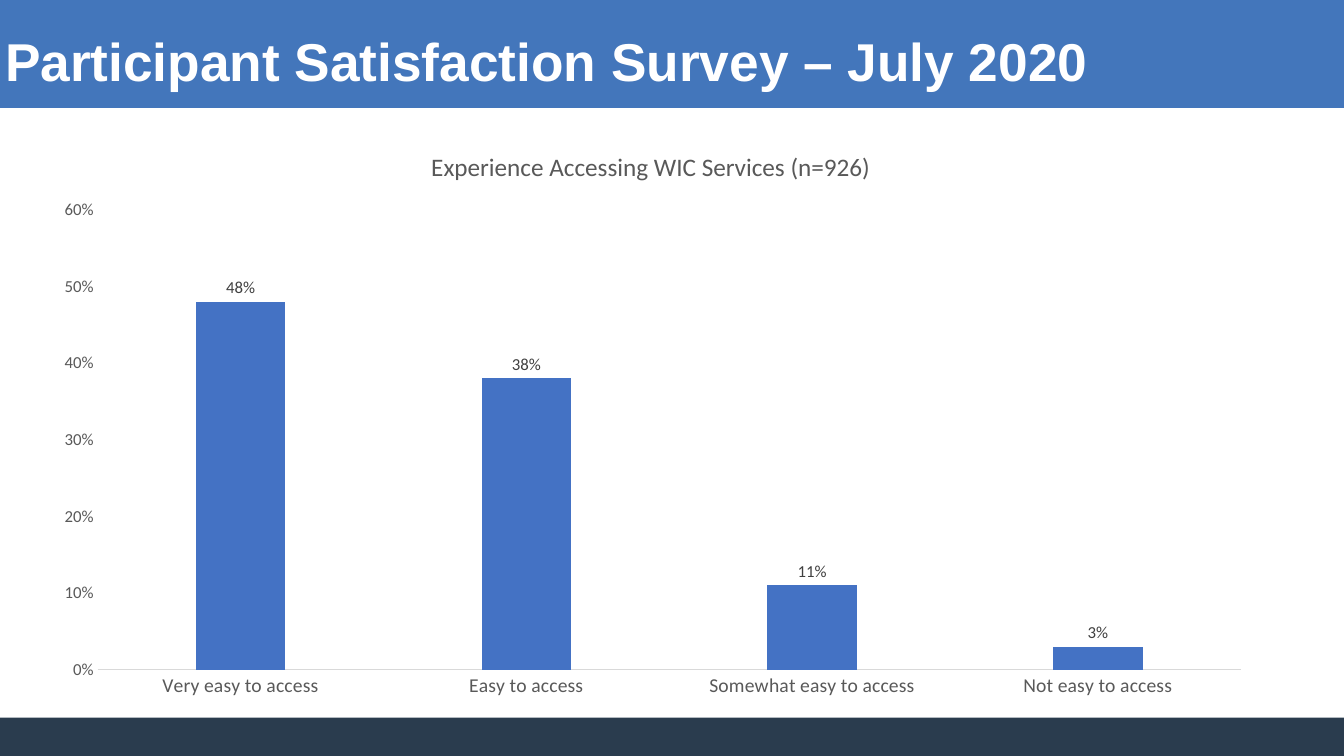
from dataclasses import dataclass
from typing import Any

import lxml.etree
import pptx
import pptx.chart.data
import pptx.dml.color
import pptx.enum.chart
import pptx.enum.shapes
import pptx.enum.text
import pptx.oxml
import pptx.oxml.ns
import pptx.util

Inches = pptx.util.Inches


@dataclass(frozen=True)
class Theme:
    heading_font: str = "Arial"
    chart_font: str = "Calibri"
    white: str = "FFFFFF"
    header: str = "4376BB"
    footer: str = "2A3C4E"
    bar: str = "4472C4"
    axis_line: str = "D9D9D9"
    axis_text: str = "595959"
    label_text: str = "404040"
    heading_size: int = 38
    chart_title_size: int = 18
    category_size: int = 14
    value_size: int = 12


@dataclass(frozen=True)
class Band:
    top: float
    height: float
    color: str


@dataclass(frozen=True)
class Answer:
    wording: str
    share: float


THEME = Theme()
SLIDE_WIDTH, SLIDE_HEIGHT = 13.33, 7.5
BANDS = [Band(0, 1.07, THEME.header), Band(7.12, 0.38, THEME.footer)]
ANSWERS = [
    Answer("Very easy to access", 0.48),
    Answer("Easy to access", 0.38),
    Answer("Somewhat easy to access", 0.11),
    Answer("Not easy to access", 0.03),
]
PLOT_AREA = {"x": 0.05, "y": 0.14, "w": 0.93, "h": 0.79}


def apply(target: Any, values: dict[str, Any]) -> None:
    for name, value in values.items():
        setattr(target, name, value)


def rgb(color: str) -> pptx.dml.color.RGBColor:
    return pptx.dml.color.RGBColor.from_string(color)


def style_font(font: Any, name: str, size: int, color: str, bold: bool = False) -> None:
    apply(font, {"name": name, "size": pptx.util.Pt(size), "bold": bold})
    font.color.rgb = rgb(color)


def draw_band(slide: Any, band: Band) -> None:
    strip = slide.shapes.add_shape(
        pptx.enum.shapes.MSO_SHAPE.RECTANGLE,
        Inches(0), Inches(band.top), Inches(SLIDE_WIDTH), Inches(band.height),
    )
    strip.shadow.inherit = False
    strip.fill.solid()
    strip.fill.fore_color.rgb = rgb(band.color)
    strip.line.fill.background()


def write_heading(slide: Any, wording: str) -> None:
    heading = slide.shapes.title
    heading.element.getparent().append(heading.element)
    apply(heading, {"left": Inches(0), "top": Inches(0.25),
                    "width": Inches(12.44), "height": Inches(0.83)})
    frame = heading.text_frame
    frame.text = wording
    apply(frame, {
        "word_wrap": True,
        "auto_size": pptx.enum.text.MSO_AUTO_SIZE.NONE,
        "vertical_anchor": pptx.enum.text.MSO_ANCHOR.TOP,
        "margin_left": Inches(0.05),
        "margin_top": Inches(0.1),
    })
    paragraph = frame.paragraphs[0]
    apply(paragraph, {"alignment": pptx.enum.text.PP_ALIGN.LEFT, "line_spacing": 0.9})
    style_font(paragraph.runs[0].font, THEME.heading_font, THEME.heading_size, THEME.white, True)


def place_plot_area(chart: Any) -> None:
    plot_area = chart.element.find(".//" + pptx.oxml.ns.qn("c:plotArea"))
    for previous in plot_area.findall(pptx.oxml.ns.qn("c:layout")):
        plot_area.remove(previous)
    layout = pptx.oxml.parse_xml(f"<c:layout {pptx.oxml.ns.nsdecls('c')}><c:manualLayout/></c:layout>")
    settings = {"layoutTarget": "inner", "xMode": "edge", "yMode": "edge", **PLOT_AREA}
    for tag, value in settings.items():
        lxml.etree.SubElement(layout[0], pptx.oxml.ns.qn(f"c:{tag}"), val=str(value))
    plot_area.insert(0, layout)


def style_axes(chart: Any) -> None:
    for axis, size in ((chart.category_axis, THEME.category_size),
                       (chart.value_axis, THEME.value_size)):
        apply(axis, {
            "major_tick_mark": pptx.enum.chart.XL_TICK_MARK.NONE,
            "minor_tick_mark": pptx.enum.chart.XL_TICK_MARK.NONE,
            "has_major_gridlines": False,
        })
        style_font(axis.tick_labels.font, THEME.chart_font, size, THEME.axis_text)
    baseline = chart.category_axis.format.line
    baseline.color.rgb = rgb(THEME.axis_line)
    baseline.width = pptx.util.Pt(0.75)
    apply(chart.value_axis, {"minimum_scale": 0, "maximum_scale": 0.6, "major_unit": 0.1})
    chart.value_axis.format.line.fill.background()
    apply(chart.value_axis.tick_labels, {"number_format": "0%", "number_format_is_linked": False})


def draw_survey_chart(slide: Any, wording: str, answers: list[Answer]) -> None:
    survey = pptx.chart.data.CategoryChartData(number_format="0%")
    survey.categories = [answer.wording for answer in answers]
    survey.add_series("Series 1", [answer.share for answer in answers])
    chart = slide.shapes.add_chart(
        pptx.enum.chart.XL_CHART_TYPE.COLUMN_CLUSTERED,
        Inches(0.36), Inches(1.27), Inches(12.19), Inches(5.78), survey,
    ).chart
    apply(chart, {"has_legend": False, "has_title": True})
    style_font(chart.font, THEME.chart_font, THEME.value_size, THEME.axis_text)
    chart_title = chart.chart_title
    chart_title.include_in_layout = False
    chart_title.text_frame.text = wording
    style_font(chart_title.text_frame.paragraphs[0].runs[0].font,
               THEME.chart_font, THEME.chart_title_size, THEME.axis_text)
    place_plot_area(chart)
    style_axes(chart)

    plot = chart.plots[0]
    apply(plot, {"gap_width": 219, "overlap": -27,
                 "vary_by_categories": False, "has_data_labels": True})
    apply(plot.data_labels, {
        "show_value": True,
        "position": pptx.enum.chart.XL_LABEL_POSITION.OUTSIDE_END,
        "number_format": "0%",
        "number_format_is_linked": False,
    })
    style_font(plot.data_labels.font, THEME.chart_font, THEME.value_size, THEME.label_text)
    bars = plot.series[0]
    bars.format.fill.solid()
    bars.format.fill.fore_color.rgb = rgb(THEME.bar)


def main() -> None:
    deck = pptx.Presentation()
    apply(deck, {"slide_width": Inches(SLIDE_WIDTH), "slide_height": Inches(SLIDE_HEIGHT)})
    slide = deck.slides.add_slide(deck.slide_layouts.get_by_name("Title Only"))
    for band in BANDS:
        draw_band(slide, band)
    write_heading(slide, "Participant Satisfaction Survey – July 2020")
    draw_survey_chart(slide, "Experience Accessing WIC Services (n=926)", ANSWERS)
    deck.save("out.pptx")


if __name__ == "__main__":
    main()
